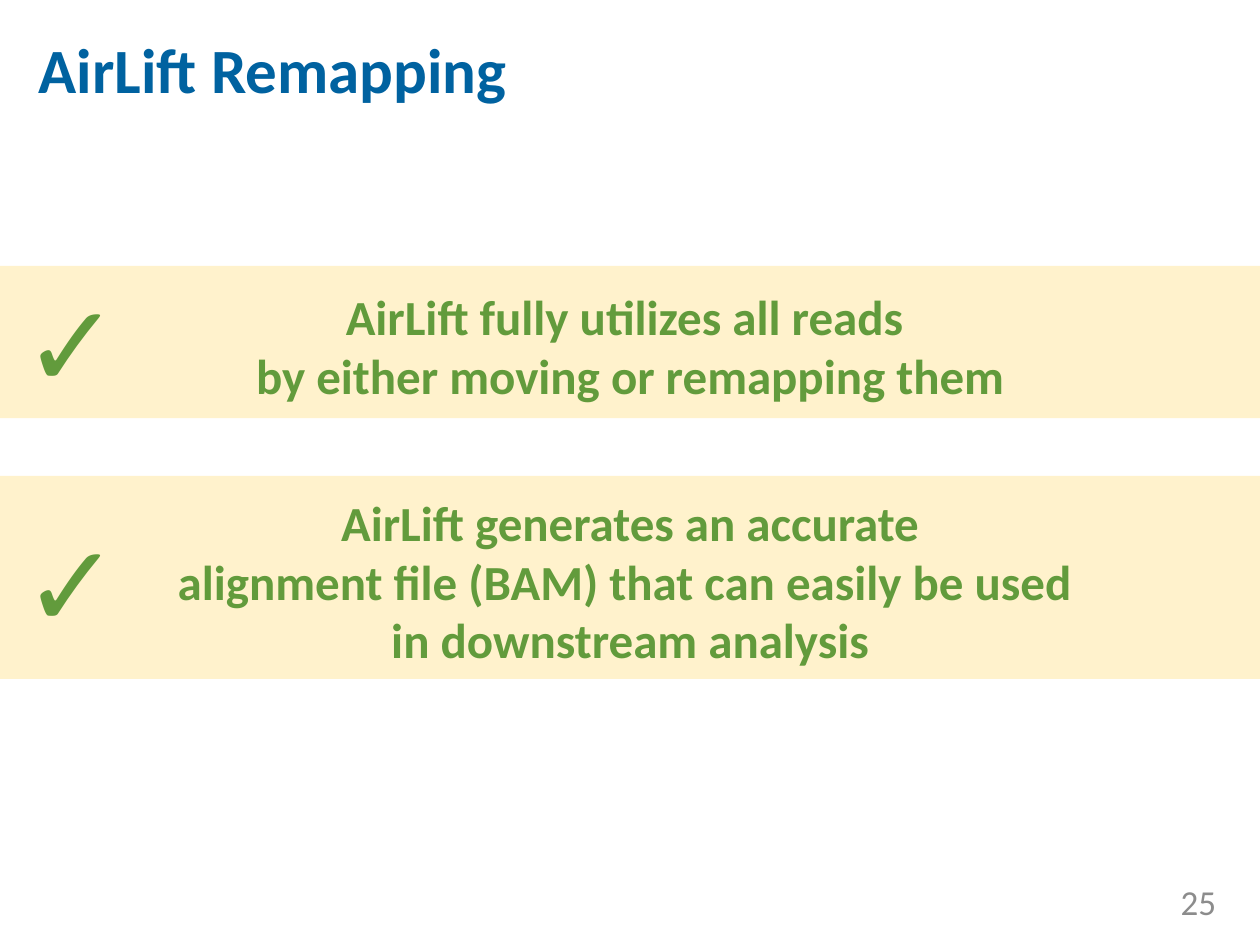
from dataclasses import dataclass

from pptx import Presentation
from pptx.dml.color import RGBColor
from pptx.enum.shapes import MSO_SHAPE
from pptx.enum.text import MSO_ANCHOR, PP_ALIGN
from pptx.util import Pt

RECTANGLE = MSO_SHAPE.RECTANGLE
TOP, MIDDLE = MSO_ANCHOR.TOP, MSO_ANCHOR.MIDDLE
LEFT, CENTER, RIGHT = PP_ALIGN.LEFT, PP_ALIGN.CENTER, PP_ALIGN.RIGHT

COLORS = {"title": "0062A0", "band": "FFF2CC", "claim": "629B3C", "number": "8C8C8C"}
SLIDE_WIDTH, SLIDE_HEIGHT = 720, 540


@dataclass
class Claim:
    top: float
    height: float
    check_top: float
    text: str


CLAIMS = [
    Claim(152, 87, 152,
          "AirLift fully utilizes all reads \nby either moving or remapping them"),
    Claim(272, 116, 289,
          "AirLift generates an accurate\n"
          "alignment file (BAM) that can easily be used \n"
          "in downstream analysis"),
]


def write(shape, text: str, size: float, color: str, align=LEFT, anchor=MIDDLE,
          bold: bool = True, font: str = "Calibri") -> None:
    """Set the text of a shape and format all its runs alike."""
    frame = shape.text_frame
    frame.text = text
    frame.word_wrap = True
    frame.vertical_anchor = anchor
    for paragraph in frame.paragraphs:
        paragraph.alignment = align
        for run in paragraph.runs:
            run.font.name = font
            run.font.size = Pt(size)
            run.font.bold = bold
            run.font.color.rgb = RGBColor.from_string(COLORS[color])


def add_claim(slide, claim: Claim) -> None:
    """Draw a full-width band with its claim and a check mark."""
    band = slide.shapes.add_shape(RECTANGLE, 0, Pt(claim.top),
                                  Pt(SLIDE_WIDTH), Pt(claim.height))
    band.shadow.inherit = False
    band.fill.solid()
    band.fill.fore_color.rgb = RGBColor.from_string(COLORS["band"])
    band.line.fill.background()
    # A deeper top inset centres the lowercase letters in the band
    band.text_frame.margin_top = Pt(7)
    write(band, claim.text, 28, "claim", CENTER)

    check = slide.shapes.add_textbox(Pt(6.5), Pt(claim.check_top), Pt(73.5), Pt(87))
    write(check, "✓", 66, "claim", anchor=TOP, font="Arial")


def main() -> None:
    presentation = Presentation()
    presentation.slide_width = Pt(SLIDE_WIDTH)
    presentation.slide_height = Pt(SLIDE_HEIGHT)
    slide = presentation.slides.add_slide(presentation.slide_layouts[5])

    # Title
    title = slide.shapes.title
    title.left, title.top, title.width, title.height = Pt(15), Pt(7), Pt(693), Pt(60.5)
    title.text_frame.margin_top = Pt(7)
    write(title, "AirLift Remapping", 36, "title")

    # Claims
    for claim in CLAIMS:
        add_claim(slide, claim)

    # Slide number
    number = slide.shapes.add_textbox(Pt(624), Pt(500.5), Pt(78), Pt(29))
    write(number, "25", 20, "number", RIGHT, bold=False)

    presentation.save("out.pptx")


if __name__ == "__main__":
    main()
